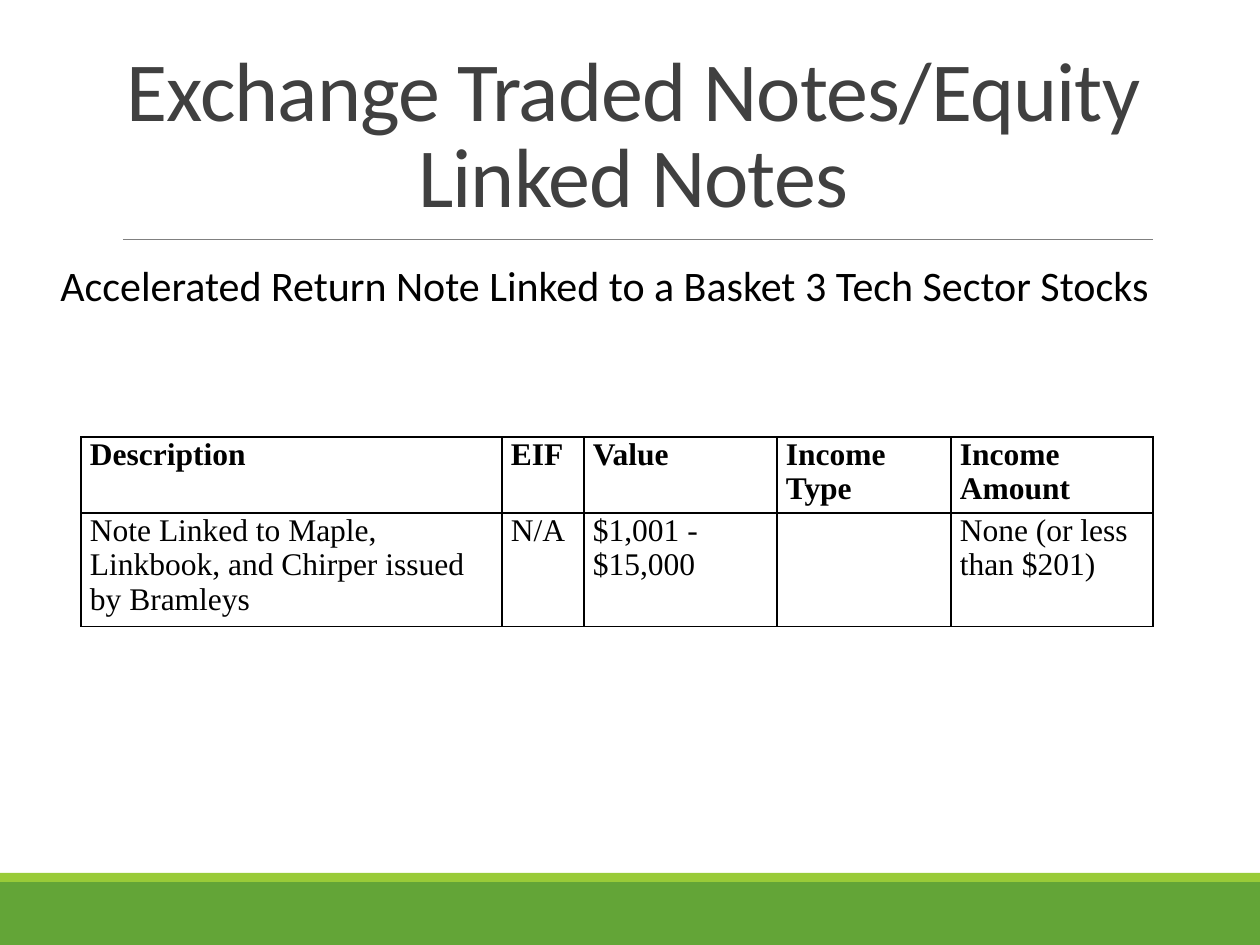
from lxml import etree
from pptx import Presentation
from pptx.dml.color import RGBColor
from pptx.enum.shapes import MSO_CONNECTOR, MSO_SHAPE
from pptx.enum.text import MSO_ANCHOR, PP_ALIGN
from pptx.oxml.ns import qn
from pptx.util import Emu, Pt

SCALE = 914400 // 126
RECT = MSO_SHAPE.RECTANGLE
STRAIGHT = MSO_CONNECTOR.STRAIGHT
TOP, MIDDLE = MSO_ANCHOR.TOP, MSO_ANCHOR.MIDDLE
LEFT, CENTER = PP_ALIGN.LEFT, PP_ALIGN.CENTER

COLUMN_WIDTHS = [421, 82, 193, 174, 202]
ROW_HEIGHTS = [76, 113]
HOLDINGS = [
    ["Description", "EIF", "Value", "Income Type", "Income Amount"],
    ["Note Linked to Maple, Linkbook, and Chirper issued by Bramleys",
     "N/A", "$1,001 - $15,000", "", "None (or less than $201)"],
]


def px(n):
    """Turn pixels into EMU."""
    return Emu(n * SCALE)


def rgb(value):
    """Turn a hex string into a colour."""
    return RGBColor.from_string(value)


def style_font(font, name, size, color, bold=False):
    """Set the face, size, colour and weight of a font."""
    font.name, font.size, font.bold = name, Pt(size), bold
    font.color.rgb = rgb(color)


def add_band(slide, y, height, color):
    """Add a plain band across the slide."""
    sp = slide.shapes.add_shape(RECT, 0, px(y), px(1260), px(height))
    sp.shadow.inherit = False
    sp.fill.solid()
    sp.fill.fore_color.rgb = rgb(color)
    sp.line.fill.background()


def add_rule(slide, x1, x2, y):
    """Add a thin horizontal line."""
    line = slide.shapes.add_connector(STRAIGHT, px(x1), px(y), px(x2), px(y))
    line.line.color.rgb = rgb("808080")
    line.line.width = Pt(0.5)
    etree.SubElement(line._element.spPr, qn("a:effectLst"))


def add_text(slide, text, box, size, color, align=LEFT, anchor=TOP):
    """Add a wrapped one-paragraph text box and return its paragraph."""
    tf = slide.shapes.add_textbox(*map(px, box)).text_frame
    tf.word_wrap = True
    tf.vertical_anchor = anchor
    p = tf.paragraphs[0]
    p.text = text
    p.alignment = align
    style_font(p.runs[0].font, "Calibri", size, color)
    return p


def set_borders(cell, color, width):
    """Draw a solid border on all four sides of a cell."""
    tc_pr = cell._tc.get_or_add_tcPr()
    for i, side in enumerate(("lnL", "lnR", "lnT", "lnB")):
        ln = etree.Element(qn(f"a:{side}"), w=str(Pt(width)))
        fill = etree.SubElement(ln, qn("a:solidFill"))
        etree.SubElement(fill, qn("a:srgbClr"), val=color)
        tc_pr.insert(i, ln)


def fill_cell(cell, text, bold):
    """Set the text, margins, fill and borders of a cell."""
    cell.margin_left = cell.margin_right = px(9)
    cell.margin_top = cell.margin_bottom = 0
    cell.fill.solid()
    cell.fill.fore_color.rgb = rgb("FFFFFF")
    set_borders(cell, "000000", 1)
    p = cell.text_frame.paragraphs[0]
    p.text = text
    for r in p.runs:
        style_font(r.font, "Times New Roman", 18, "000000", bold)


def add_holdings_table(slide, x, y):
    """Add the table of holdings with a bold header row."""
    table = slide.shapes.add_table(
        len(ROW_HEIGHTS), len(COLUMN_WIDTHS), px(x), px(y),
        px(sum(COLUMN_WIDTHS)), px(sum(ROW_HEIGHTS))).table
    for column, width in zip(table.columns, COLUMN_WIDTHS):
        column.width = px(width)
    for i, (row, height) in enumerate(zip(table.rows, ROW_HEIGHTS)):
        row.height = px(height)
        for cell, text in zip(row.cells, HOLDINGS[i]):
            fill_cell(cell, text, bold=i == 0)


def main():
    """Build the slide and save it."""
    prs = Presentation()
    prs.slide_width, prs.slide_height = px(1260), px(945)
    s = prs.slides.add_slide(prs.slide_layouts[6])
    add_band(s, 882, 63, "63A537")
    add_band(s, 873, 9, "99CB38")
    add_rule(s, 123, 1153, 239)
    title = add_text(s, "Exchange Traded Notes/Equity Linked Notes",
                     (113, 39, 1040, 200), 48, "404040", CENTER, MIDDLE)
    title.line_spacing = 0.85
    title.runs[0].font._element.set("spc", "-50")
    add_text(s, "Accelerated Return Note Linked to a Basket 3 Tech Sector Stocks",
             (48, 253, 1192, 394), 24, "000000")
    add_holdings_table(s, 81, 437)
    prs.save("out.pptx")


if __name__ == "__main__":
    main()
